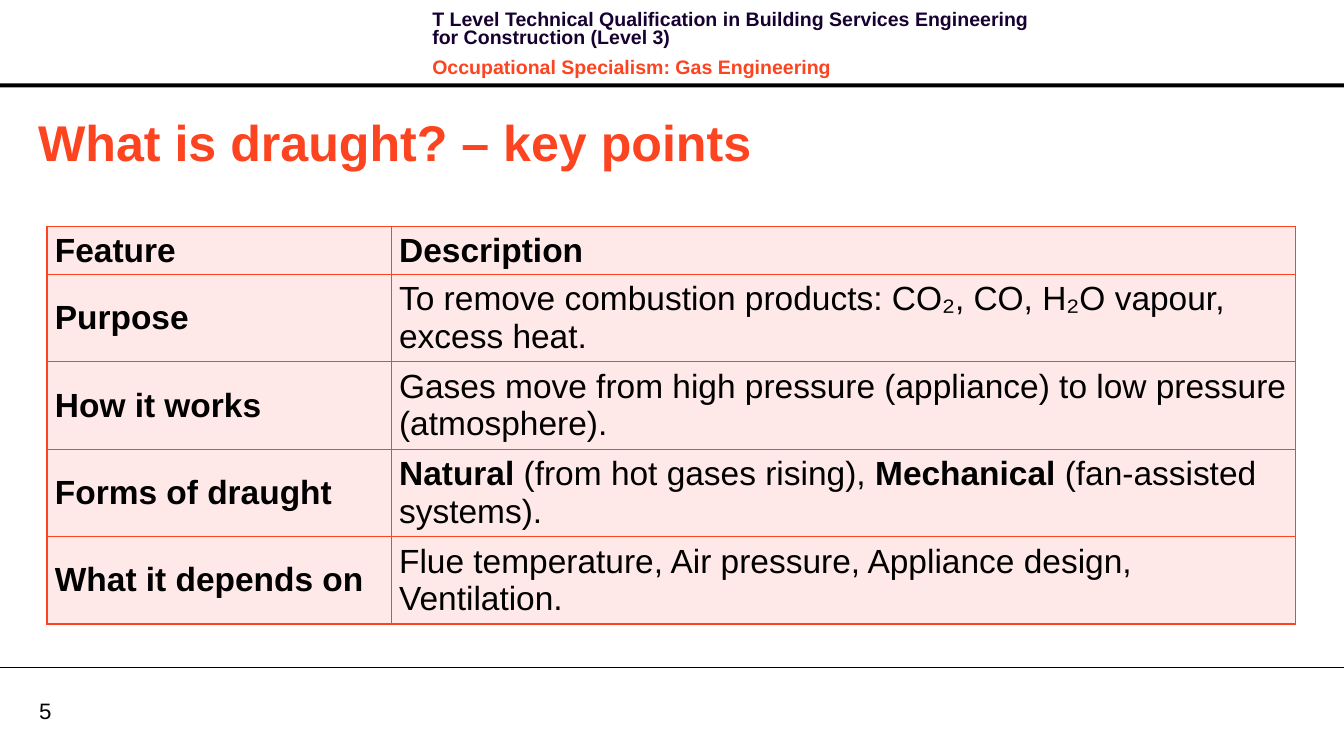
from dataclasses import dataclass

from lxml.etree import SubElement
from pptx import Presentation
from pptx.dml.color import RGBColor
from pptx.enum.shapes import MSO_CONNECTOR as Connector, MSO_SHAPE as Preset
from pptx.enum.text import MSO_ANCHOR as Anchor, MSO_AUTO_SIZE as AutoSize, PP_ALIGN as Align
from pptx.oxml.ns import qn
from pptx.util import Cm, Pt

TITLE = "What is draught? – key points"
QUALIFICATION = "T Level Technical Qualification in Building Services Engineering for Construction (Level 3)"
SPECIALISM = "Occupational Specialism: Gas Engineering"
PAGE = "5"
BOLD_TERMS = ("Natural", "Mechanical")
KEY_POINTS = [
    ("Feature", ["Description"]),
    ("Purpose", ["To remove combustion products: CO₂, CO, H₂O vapour, excess heat."]),
    ("How it works", ["Gases move from high pressure (appliance) to low pressure (atmosphere)."]),
    ("Forms of draught", ["Natural", " (from hot gases rising), ", "Mechanical", " (fan-assisted systems)."]),
    ("What it depends on", ["Flue temperature, Air pressure, Appliance design, Ventilation."]),
]


@dataclass(frozen=True)
class Theme:
    font: str = "Arial"
    accent: str = "FC4421"
    navy: str = "170130"
    black: str = "000000"
    cell: str = "FEE9E8"
    title: int = 36
    table: int = 24
    page: int = 16
    header: int = 14


THEME = Theme()
WIDTH, HEIGHT = Cm(34.01), Cm(19)
COLUMNS = (Cm(8.71), Cm(22.89))
HEADING_ROW, POINT_ROW = Cm(1.14), Cm(2.1)


def style(paragraph, size, color, bold=None):
    font = paragraph.font
    font.name, font.size, font.bold = THEME.font, Pt(size), bold
    font.color.rgb = RGBColor.from_string(color)


def add_rules(slide):
    band = slide.shapes.add_shape(Preset.RECTANGLE, 0, Cm(2.11), WIDTH, Cm(0.1))
    band.shadow.inherit = False
    band.fill.solid()
    band.fill.fore_color.rgb = RGBColor.from_string(THEME.black)
    band.line.fill.background()
    footer = slide.shapes.add_connector(Connector.STRAIGHT, 0, Cm(16.89), WIDTH, Cm(16.89))
    footer.line.width = Pt(0.75)
    footer.line.color.rgb = RGBColor.from_string(THEME.black)
    SubElement(footer._element.spPr, qn("a:effectLst"))


def add_header(slide):
    header = slide.shapes.add_textbox(Cm(10.69), Cm(0.18), Cm(16.18), Cm(1.63)).text_frame
    header.word_wrap = True
    header.text = f"{QUALIFICATION}\n{SPECIALISM}"
    for paragraph, color in zip(header.paragraphs, (THEME.navy, THEME.accent)):
        paragraph.line_spacing = Pt(13.1)
        paragraph.space_after = Pt(4)
        style(paragraph, THEME.header, color, True)
    header.paragraphs[1].space_before = Pt(4)


def add_page_number(slide):
    page = slide.shapes.add_textbox(Cm(0.99), Cm(17.63), Cm(1.63), Cm(0.69)).text_frame
    page.margin_left = page.margin_right = page.margin_top = page.margin_bottom = 0
    page.word_wrap = True
    page.vertical_anchor = Anchor.MIDDLE
    page.text = PAGE
    style(page.paragraphs[0], THEME.page, THEME.black)


def add_title(slide):
    title = slide.shapes.title
    title.left, title.top, title.width, title.height = Cm(0.71), Cm(2.67), Cm(32.31), Cm(1.8)
    frame = title.text_frame
    frame.text = TITLE
    frame.auto_size = AutoSize.NONE
    frame.vertical_anchor = Anchor.MIDDLE
    frame.paragraphs[0].alignment = Align.LEFT
    style(frame.paragraphs[0], THEME.title, THEME.accent, True)


def format_cell(cell):
    cell.margin_left = cell.margin_right = Cm(0.2)
    cell.margin_top = cell.margin_bottom = Cm(0.09)
    cell.vertical_anchor = Anchor.MIDDLE
    properties = cell._tc.get_or_add_tcPr()
    for side in ("a:lnL", "a:lnR", "a:lnT", "a:lnB"):
        border = SubElement(properties, qn(side), w=str(Pt(1)))
        SubElement(SubElement(border, qn("a:solidFill")), qn("a:srgbClr"), val=THEME.accent)
    cell.fill.solid()
    cell.fill.fore_color.rgb = RGBColor.from_string(THEME.cell)


def add_key_points(slide):
    height = HEADING_ROW + POINT_ROW * (len(KEY_POINTS) - 1)
    table = slide.shapes.add_table(
        len(KEY_POINTS), len(COLUMNS), Cm(1.19), Cm(5.74), sum(COLUMNS), height
    ).table
    table.first_row = table.horz_banding = False
    for column, width in zip(table.columns, COLUMNS):
        column.width = width
    for index, (feature, description) in enumerate(KEY_POINTS):
        row = table.rows[index]
        row.height = POINT_ROW if index else HEADING_ROW
        for position, (cell, parts) in enumerate(zip(row.cells, ([feature], description))):
            format_cell(cell)
            paragraph = cell.text_frame.paragraphs[0]
            for part in parts:
                run = paragraph.add_run()
                run.text = part
                if part in BOLD_TERMS:
                    run.font.bold = True
            style(paragraph, THEME.table, THEME.black, index == 0 or position == 0)


def main():
    deck = Presentation()
    deck.slide_width, deck.slide_height = WIDTH, HEIGHT
    slide = deck.slides.add_slide(deck.slide_layouts[5])
    add_rules(slide)
    add_page_number(slide)
    add_header(slide)
    add_title(slide)
    add_key_points(slide)
    deck.save("out.pptx")


if __name__ == "__main__":
    main()
